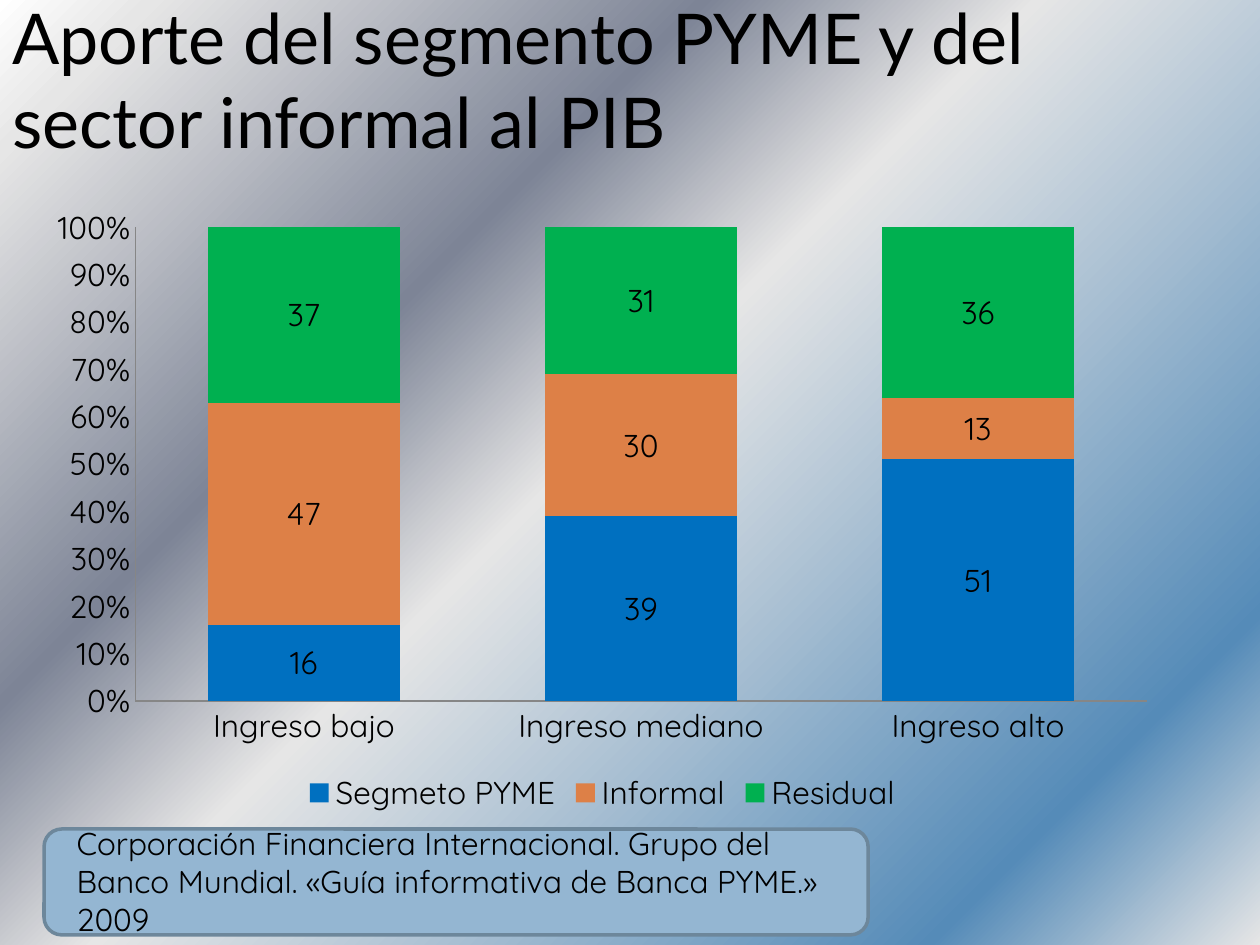
from lxml import etree
from pptx import Presentation
from pptx.chart.data import CategoryChartData
from pptx.dml.color import RGBColor
from pptx.enum.chart import XL_CHART_TYPE, XL_LEGEND_POSITION, XL_TICK_MARK
from pptx.enum.shapes import MSO_SHAPE
from pptx.enum.text import MSO_ANCHOR
from pptx.oxml import parse_xml
from pptx.oxml.ns import nsdecls
from pptx.util import Inches, Pt

STACKED_100 = XL_CHART_TYPE.COLUMN_STACKED_100
LEGEND_BOTTOM = XL_LEGEND_POSITION.BOTTOM
NO_TICK = XL_TICK_MARK.NONE
ROUNDED = MSO_SHAPE.ROUNDED_RECTANGLE
TOP, MIDDLE = MSO_ANCHOR.TOP, MSO_ANCHOR.MIDDLE

BLACK = RGBColor(0x00, 0x00, 0x00)
AXIS_GREY = RGBColor(0x86, 0x86, 0x86)
BLUE = RGBColor(0x00, 0x70, 0xC0)
ORANGE = RGBColor(0xDD, 0x80, 0x47)
GREEN = RGBColor(0x00, 0xB0, 0x50)
PANEL_FILL = RGBColor(0x94, 0xB6, 0xD2)
PANEL_LINE = RGBColor(0x6D, 0x87, 0x9B)

# Position in percent, colour
BACKGROUND_STOPS = [
    (0, RGBColor(0xFF, 0xFF, 0xFF)),
    (7, RGBColor(0xE6, 0xE6, 0xE6)),
    (32, RGBColor(0x7D, 0x84, 0x96)),
    (47, RGBColor(0xE6, 0xE6, 0xE6)),
    (85, RGBColor(0x55, 0x8B, 0xB8)),
    (100, RGBColor(0xE6, 0xE6, 0xE6)),
]

TITLE_FONT = {"name": "Lato", "size": Pt(40)}
BODY_FONT = {"name": "Quicksand", "size": Pt(18)}

CATEGORIES = ["Ingreso bajo", "Ingreso mediano", "Ingreso alto"]
SERIES = [
    ("Segmeto PYME", (16, 39, 51), BLUE),
    ("Informal", (47, 30, 13), ORANGE),
    ("Residual", (37, 31, 36), GREEN),
]


def format_font(font, values):
    for name, value in values.items():
        setattr(font, name, value)
    font.color.rgb = BLACK


def set_background(slide):
    """Fill the slide with a gradient that spreads from the top left corner."""
    stops = "".join(
        f'<a:gs pos="{position * 1000}"><a:srgbClr val="{color}"/></a:gs>'
        for position, color in BACKGROUND_STOPS
    )
    gradient = parse_xml(
        f'<a:gradFill {nsdecls("a")} rotWithShape="1"><a:gsLst>{stops}</a:gsLst>'
        '<a:path path="circle"><a:fillToRect r="100000" b="100000"/></a:path>'
        "</a:gradFill>"
    )
    fill = slide.background.fill
    fill.solid()
    properties = slide.element.find(".//" + "{%s}bgPr" % slide.element.nsmap["p"])
    properties.replace(properties[0], gradient)
    etree.cleanup_namespaces(properties)


def add_text(slide, place, text, font_values, anchor):
    box = slide.shapes.add_textbox(*map(Inches, place))
    frame = box.text_frame
    frame.word_wrap = True
    frame.vertical_anchor = anchor
    span = frame.paragraphs[0].add_run()
    span.text = text
    format_font(span.font, font_values)


def add_panel(slide, place):
    panel = slide.shapes.add_shape(ROUNDED, *map(Inches, place))
    panel.shadow.inherit = False
    panel.fill.solid()
    panel.fill.fore_color.rgb = PANEL_FILL
    panel.line.color.rgb = PANEL_LINE
    panel.line.width = Pt(2)


def format_axis(axis):
    axis.major_tick_mark = NO_TICK
    axis.minor_tick_mark = NO_TICK
    axis.has_major_gridlines = False
    axis.format.line.color.rgb = AXIS_GREY
    axis.format.line.width = Pt(0.75)


def add_stacked_chart(slide, place):
    data = CategoryChartData()
    data.categories = CATEGORIES
    for name, values, _ in SERIES:
        data.add_series(name, values)
    chart = slide.shapes.add_chart(STACKED_100, *map(Inches, place), data).chart
    format_font(chart.font, BODY_FONT)
    chart.has_title = False

    # Columns and their values
    plot = chart.plots[0]
    plot.gap_width = 75
    plot.overlap = 100
    plot.vary_by_categories = False
    for series, (_, _, color) in zip(plot.series, SERIES):
        series.format.fill.solid()
        series.format.fill.fore_color.rgb = color
        series.data_labels.show_value = True

    # Axes and legend
    format_axis(chart.category_axis)
    format_axis(chart.value_axis)
    chart.value_axis.tick_labels.number_format = "0%"
    chart.value_axis.tick_labels.number_format_is_linked = False
    chart.has_legend = True
    chart.legend.position = LEGEND_BOTTOM
    chart.legend.include_in_layout = False


def main():
    deck = Presentation()
    deck.slide_width, deck.slide_height = Inches(10), Inches(7.5)
    page = deck.slides.add_slide(deck.slide_layouts[6])
    set_background(page)

    # Title
    add_text(page, (0, 0, 9, 1.25),
             "Aporte del segmento PYME y del sector informal al PIB",
             TITLE_FONT, MIDDLE)

    # Share of output by income group
    add_stacked_chart(page, (0.28, 1.55, 9, 4.95))

    # Source note
    add_panel(page, (0.35, 6.58, 6.54, 0.84))
    add_text(page, (0.51, 6.49, 6.22, 1.01),
             "Corporación Financiera Internacional. Grupo del Banco Mundial. "
             "«Guía informativa de Banca PYME.» 2009",
             BODY_FONT, TOP)

    deck.save("out.pptx")


if __name__ == "__main__":
    main()
